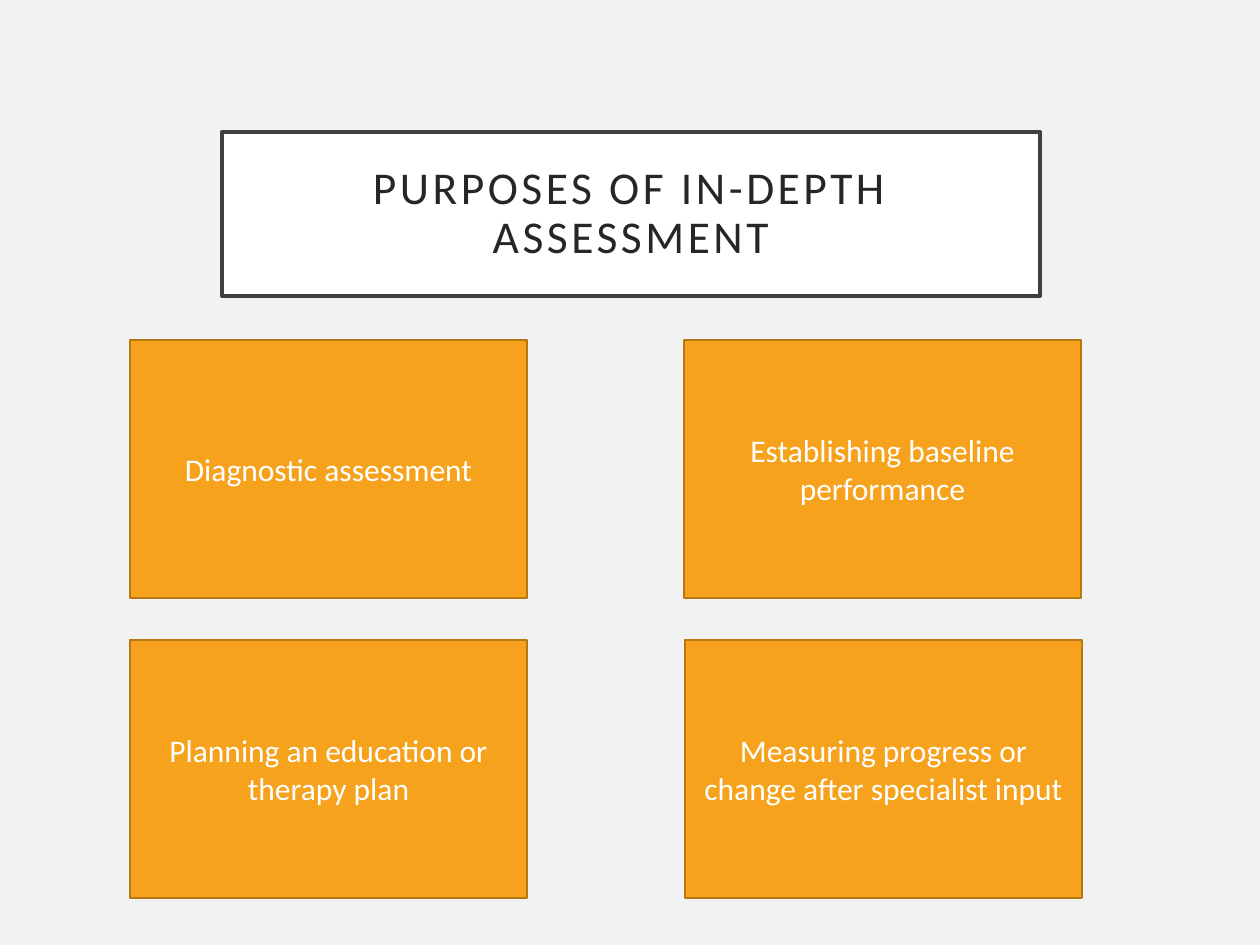
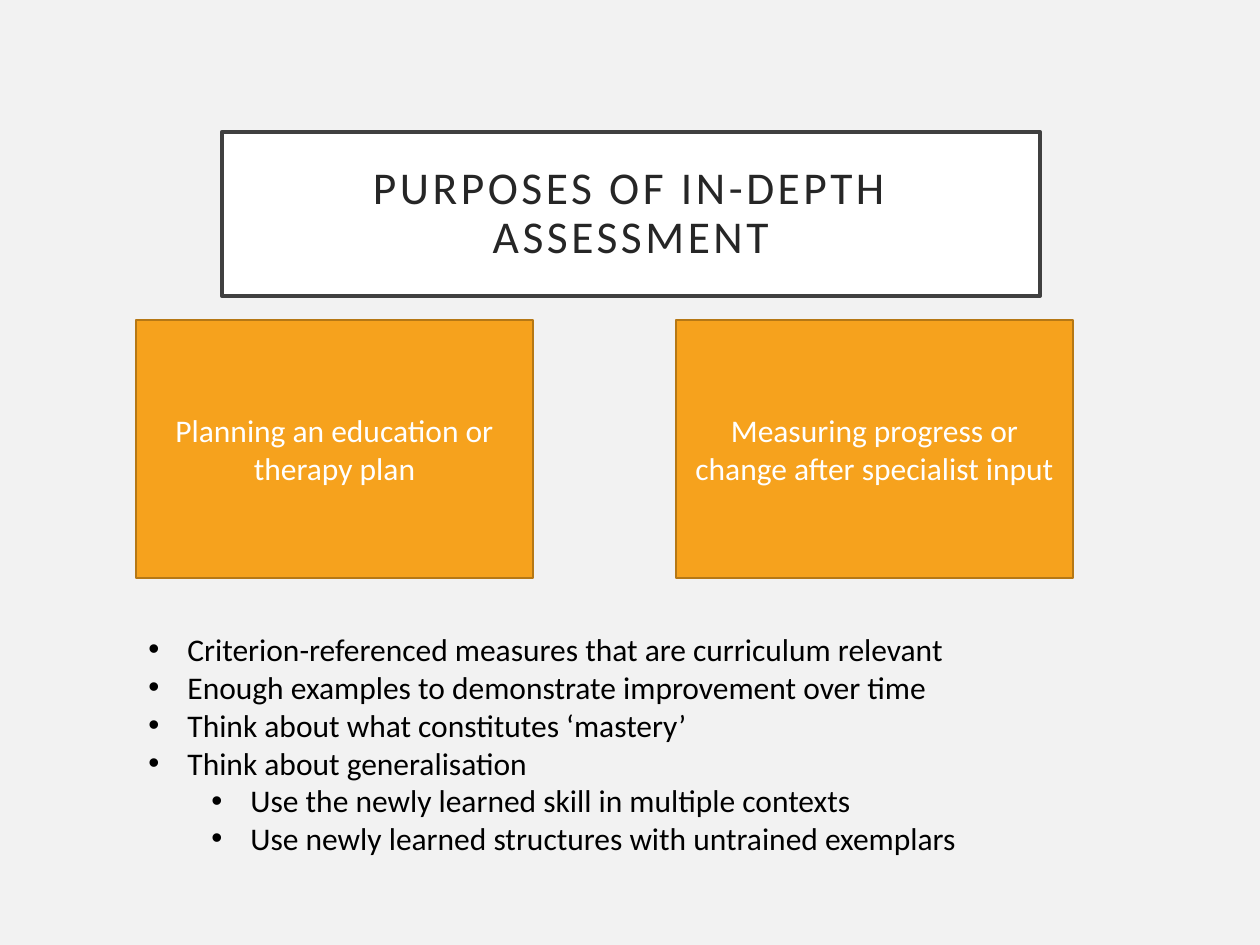
import pptx
import pptx.dml.color
import pptx.enum.shapes
import pptx.enum.text
import pptx.oxml
import pptx.oxml.ns
import pptx.util

SCALE = 914400 / 126  # EMU per px
TITLE = "PURPOSES OF IN-DEPTH ASSESSMENT"
PLANNING = "Planning an education or therapy plan"
PROGRESS = "Measuring progress or change after specialist input"
CARD_WIDTH, CARD_HEIGHT = 397, 258

TITLE_FORMAT = {
    "fill": "FFFFFF", "line": "404040", "weight": 2.5, "inset": 25, "spacing": 0.9, "tracking": 200,
    "font": {"name": "Calibri", "size": pptx.util.Pt(26)}, "color": "262626",
}
CARD_FORMAT = {
    "fill": "F6A21D", "line": "B67815", "weight": 1, "inset": None, "spacing": 1, "tracking": 0,
    "font": {"name": "Calibri", "size": pptx.util.Pt(18)}, "color": "FFFFFF",
}

# Each slide: cards as (left, top, text), then bullets as (level, text)
SLIDES = [
    {
        "cards": [
            (130, 340, "Diagnostic assessment"),
            (130, 640, PLANNING),
            (685, 640, PROGRESS),
            (684, 340, "Establishing baseline performance"),
        ],
        "bullets": [],
    },
    {
        "cards": [(136, 320, PLANNING), (676, 320, PROGRESS)],
        "bullets": [
            (0, "Criterion-referenced measures that are curriculum relevant"),
            (0, "Enough examples to demonstrate improvement over time"),
            (0, "Think about what constitutes ‘mastery’"),
            (0, "Think about generalisation"),
            (1, "Use the newly learned skill in multiple contexts"),
            (1, "Use newly learned structures with untrained exemplars"),
        ],
    },
]


def px(length):
    return pptx.util.Emu(round(length * SCALE))


def rgb(value):
    return pptx.dml.color.RGBColor.from_string(value)


presentation = pptx.Presentation()
presentation.slide_width = px(1260)
presentation.slide_height = px(945)

for content in SLIDES:
    slide = presentation.slides.add_slide(presentation.slide_layouts[6])
    slide.background.fill.solid()
    slide.background.fill.fore_color.rgb = rgb("F2F2F2")

    # Title frame and cards
    boxes = [(222, 132, 818, 164, TITLE, TITLE_FORMAT)]
    for left, top, text in content["cards"]:
        boxes.append((left, top, CARD_WIDTH, CARD_HEIGHT, text, CARD_FORMAT))
    for left, top, width, height, text, style in boxes:
        shape = slide.shapes.add_shape(
            pptx.enum.shapes.MSO_SHAPE.RECTANGLE, px(left), px(top), px(width), px(height))
        shape.shadow.inherit = False
        shape.fill.solid()
        shape.fill.fore_color.rgb = rgb(style["fill"])
        shape.line.color.rgb = rgb(style["line"])
        shape.line.width = pptx.util.Pt(style["weight"])
        frame = shape.text_frame
        frame.word_wrap = True
        frame.vertical_anchor = pptx.enum.text.MSO_ANCHOR.MIDDLE
        if style["inset"]:
            for side in ("left", "top", "right", "bottom"):
                setattr(frame, f"margin_{side}", px(style["inset"]))
        paragraph = frame.paragraphs[0]
        paragraph.alignment = pptx.enum.text.PP_ALIGN.CENTER
        paragraph.line_spacing = style["spacing"]
        run = paragraph.add_run()
        run.text = text
        for name, value in style["font"].items():
            setattr(run.font, name, value)
        run.font.color.rgb = rgb(style["color"])
        if style["tracking"]:
            run._r.get_or_add_rPr().set("spc", str(style["tracking"]))

    # Bullet list
    if content["bullets"]:
        text_box = slide.shapes.add_textbox(px(136), px(624), px(936), px(242))
        frame = text_box.text_frame
        frame.word_wrap = True
        frame.auto_size = pptx.enum.text.MSO_AUTO_SIZE.SHAPE_TO_FIT_TEXT
        for index, (level, text) in enumerate(content["bullets"]):
            paragraph = frame.add_paragraph() if index else frame.paragraphs[0]
            paragraph.level = level
            properties = paragraph._p.get_or_add_pPr()
            properties.set("marL", str(px(39 + 63 * level)))
            properties.set("indent", str(px(-39)))
            namespace = pptx.oxml.ns.nsdecls("a")
            for tag in ('buFont typeface="Arial"', 'buChar char="•"'):
                properties.append(pptx.oxml.parse_xml(f"<a:{tag.replace(' ', f' {namespace} ', 1)}/>"))
            run = paragraph.add_run()
            run.text = text
            for name, value in CARD_FORMAT["font"].items():
                setattr(run.font, name, value)
            run.font.color.rgb = rgb("000000")

presentation.save("out.pptx")
